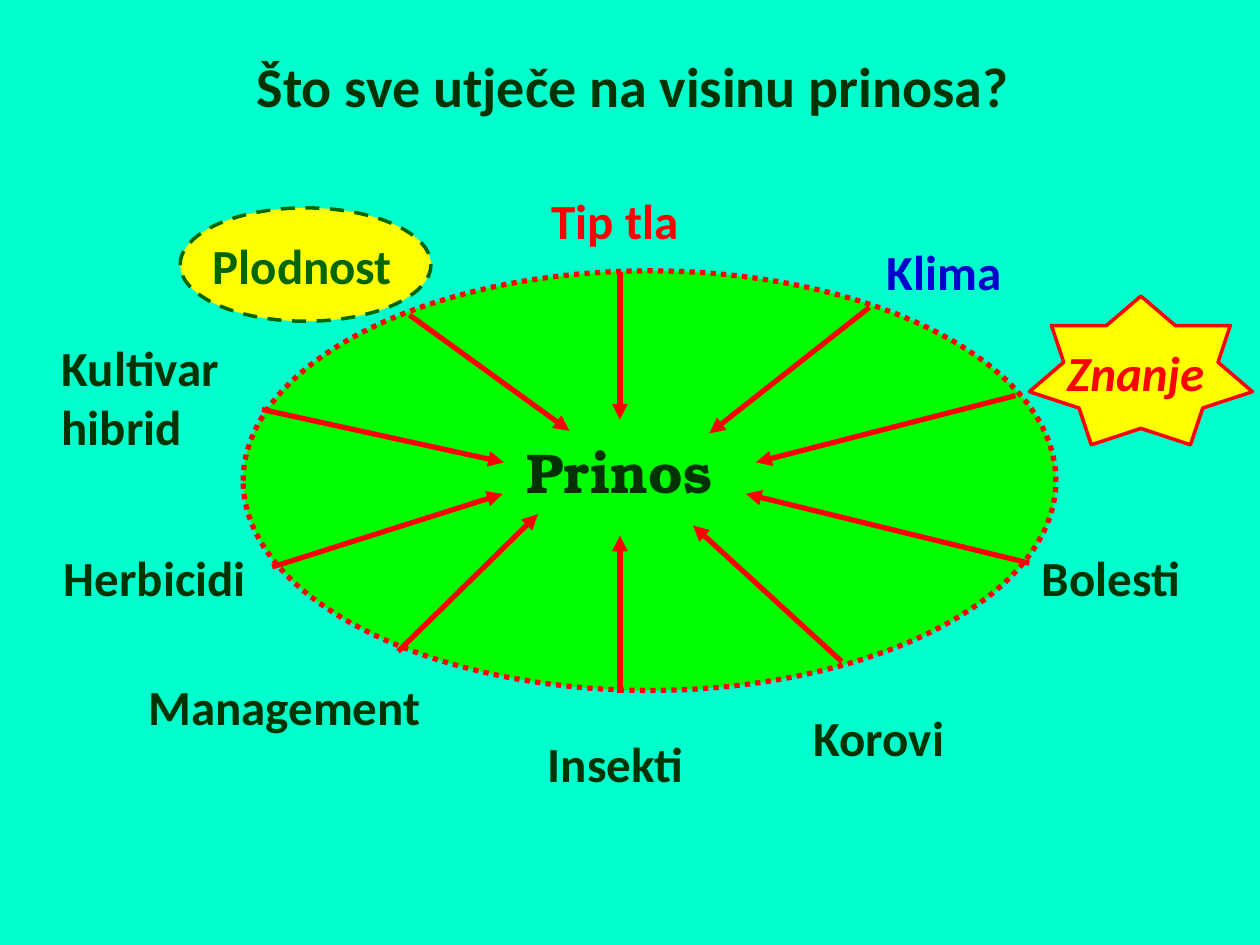
from typing import NamedTuple

from lxml import etree
from pptx import Presentation
from pptx.dml.color import RGBColor
from pptx.enum.dml import MSO_LINE
from pptx.enum.shapes import MSO_CONNECTOR, MSO_SHAPE
from pptx.enum.text import MSO_ANCHOR, MSO_AUTO_SIZE, PP_ALIGN
from pptx.oxml.ns import qn
from pptx.util import Pt

PX = 9144  # EMU per px, 100 px to the inch

AQUA = RGBColor(0x00, 0xFF, 0xCC)
LIME = RGBColor(0x00, 0xFF, 0x00)
YELLOW = RGBColor(0xFF, 0xFF, 0x00)
RED = RGBColor(0xFF, 0x00, 0x00)
BLUE = RGBColor(0x00, 0x00, 0xCC)
GREEN = RGBColor(0x00, 0x66, 0x00)
DARK = RGBColor(0x00, 0x33, 0x00)

ELLIPSE, STAR = MSO_SHAPE.OVAL, MSO_SHAPE.STAR_7_POINT
DASH, DOTS = MSO_LINE.DASH, MSO_LINE.ROUND_DOT
STRAIGHT = MSO_CONNECTOR.STRAIGHT
TOP, CENTER = MSO_ANCHOR.TOP, PP_ALIGN.CENTER
FIXED = MSO_AUTO_SIZE.NONE
SANS, SERIF = "Calibri", "TeX Gyre Bonum"


class Figure(NamedTuple):
    kind: MSO_SHAPE
    box: tuple[int, int, int, int]
    fill: RGBColor
    line: RGBColor
    width: int
    dash: MSO_LINE | None = None


class Label(NamedTuple):
    lines: tuple[str, ...]
    box: tuple[int, int, int, int]
    color: RGBColor = DARK
    italic: bool = False
    size: int = 28
    font: str = SANS
    wrap: bool = False


class Arrow(NamedTuple):
    start: tuple[int, int]
    end: tuple[int, int]


FIGURES = [
    Figure(ELLIPSE, (143, 165, 199, 90), YELLOW, GREEN, 2, DASH),
    Figure(STAR, (817, 235, 177, 118), YELLOW, RED, 2),
    Figure(ELLIPSE, (193, 215, 645, 333), LIME, RED, 3, DOTS),
]

LABELS = [
    Label(("Prinos",), (408, 342, 188, 64), size=32, font=SERIF, wrap=True),
    Label(("Tip tla",), (428, 146, 122, 57), RED),
    Label(("Klima",), (694, 187, 112, 57), BLUE),
    Label(("Znanje",), (837, 267, 130, 57), RED, italic=True),
    Label(("Bolesti",), (817, 430, 131, 57)),
    Label(("Korovi",), (636, 557, 125, 57)),
    Label(("Insekti",), (425, 577, 129, 57)),
    Label(("Management",), (108, 532, 239, 57)),
    Label(("Herbicidi",), (41, 430, 166, 57)),
    Label(("Kultivar", "hibrid"), (39, 263, 147, 104)),
    Label(("Plodnost",), (159, 182, 164, 57), GREEN),
]

# Clockwise from the top, each pointing at the yield in the middle
ARROWS = [
    Arrow((492, 216), (492, 333)),
    Arrow((690, 244), (563, 344)),
    Arrow((806, 314), (600, 367)),
    Arrow((817, 447), (592, 392)),
    Arrow((668, 525), (550, 417)),
    Arrow((492, 550), (492, 425)),
    Arrow((316, 517), (427, 408)),
    Arrow((216, 450), (399, 392)),
    Arrow((208, 325), (400, 367)),
    Arrow((325, 250), (452, 342)),
]


def emu(lengths: tuple[int, ...]) -> list[int]:
    return [n * PX for n in lengths]


def add_run(p, text: str, size: int, color: RGBColor, font: str = SANS,
            italic: bool = False) -> None:
    r = p.add_run()
    r.text = text
    r.font.name = font
    r.font.size = Pt(size)
    r.font.bold = True
    r.font.italic = italic
    r.font.color.rgb = color


def set_title(s, text: str, box: tuple[int, int, int, int]) -> None:
    sp = s.shapes.title
    sp.left, sp.top, sp.width, sp.height = emu(box)
    tf = sp.text_frame
    tf.auto_size = FIXED
    tf.vertical_anchor = TOP
    p = tf.paragraphs[0]
    p.alignment = CENTER
    add_run(p, text, 32, DARK)


def add_figure(s, figure: Figure) -> None:
    sp = s.shapes.add_shape(figure.kind, *emu(figure.box))
    sp.shadow.inherit = False
    sp.fill.solid()
    sp.fill.fore_color.rgb = figure.fill
    sp.line.color.rgb = figure.line
    sp.line.width = Pt(figure.width)
    if figure.dash is not None:
        sp.line.dash_style = figure.dash


def add_label(s, label: Label) -> None:
    tf = s.shapes.add_textbox(*emu(label.box)).text_frame
    tf.word_wrap = label.wrap
    for i, line in enumerate(label.lines):
        p = tf.add_paragraph() if i else tf.paragraphs[0]
        add_run(p, line, label.size, label.color, label.font, label.italic)


def add_arrow(s, arrow: Arrow) -> None:
    sp = s.shapes.add_connector(STRAIGHT, *emu(arrow.start + arrow.end))
    sp.line.color.rgb = RED
    sp.line.width = Pt(3)
    etree.SubElement(sp.line._get_or_add_ln(), qn("a:tailEnd"), type="triangle")
    etree.SubElement(sp._element.spPr, qn("a:effectLst"))


def main() -> None:
    prs = Presentation()
    prs.slide_width, prs.slide_height = emu((1000, 750))
    s = prs.slides.add_slide(prs.slide_layouts[5])  # title only
    s.background.fill.solid()
    s.background.fill.fore_color.rgb = AQUA

    set_title(s, "Što sve utječe na visinu prinosa?", (26, 36, 953, 64))
    for figure in FIGURES:
        add_figure(s, figure)
    for label in LABELS:
        add_label(s, label)
    for arrow in ARROWS:
        add_arrow(s, arrow)

    prs.save("out.pptx")


if __name__ == "__main__":
    main()
